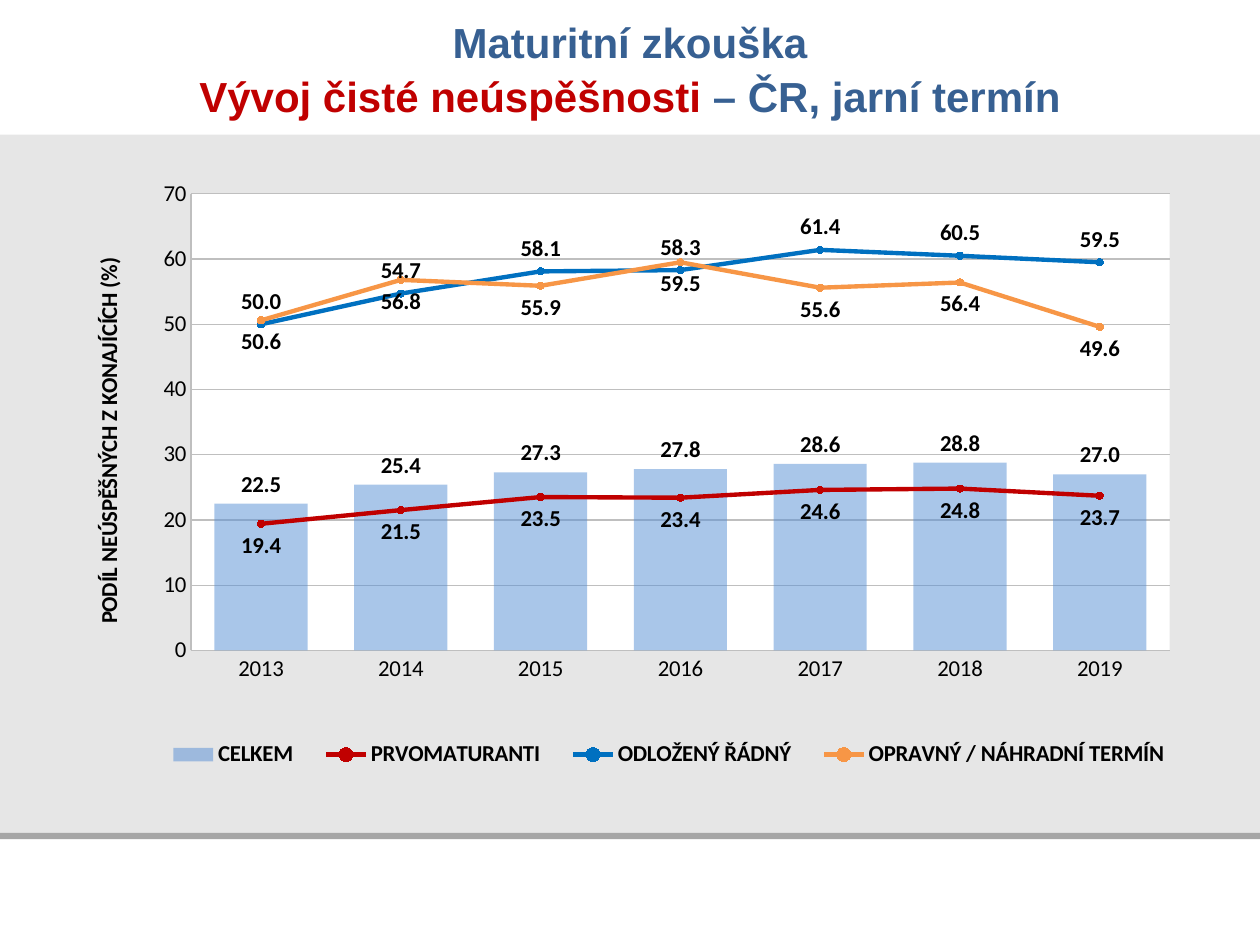
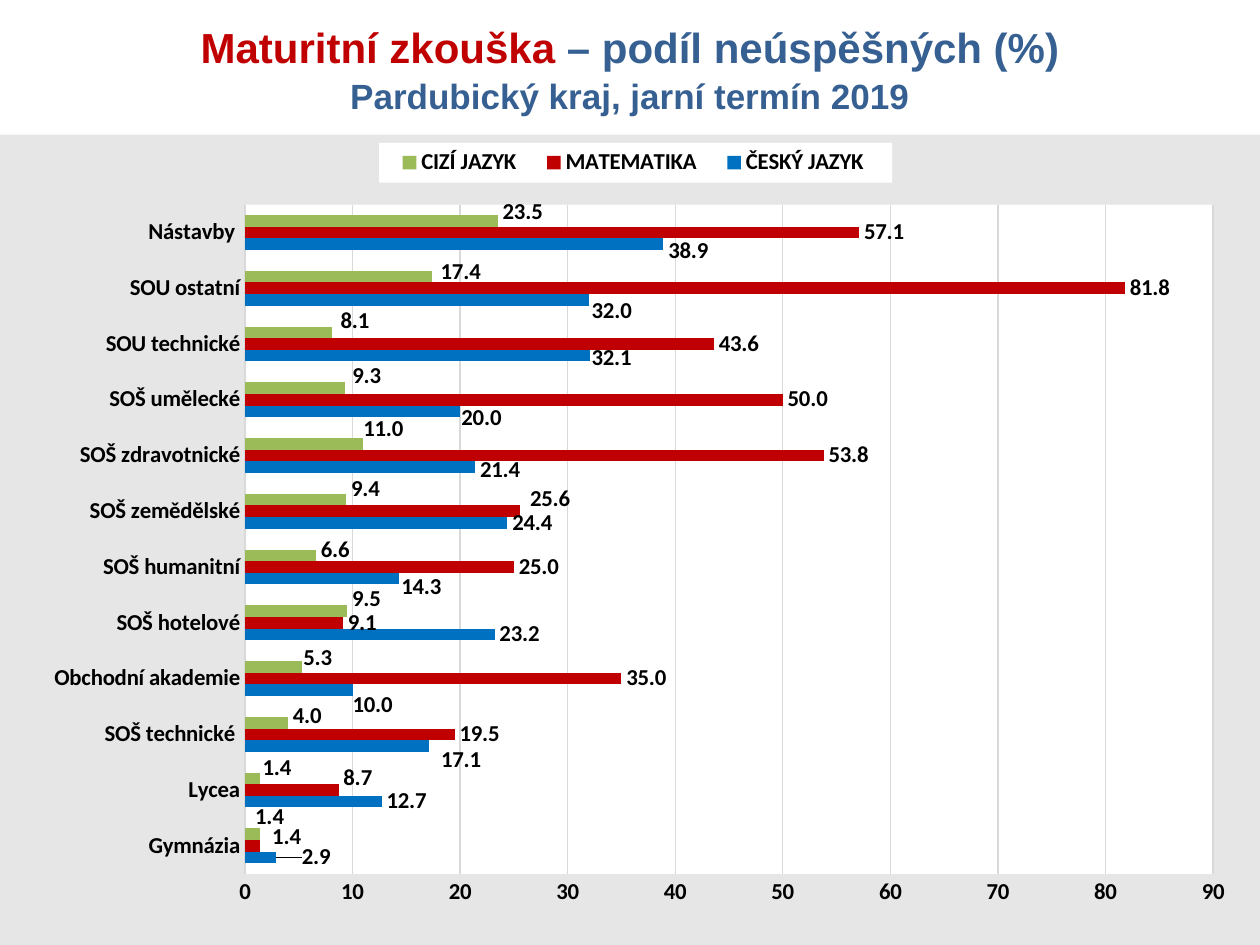
from dataclasses import dataclass

from lxml import etree
from pptx import Presentation
from pptx.chart.data import CategoryChartData
from pptx.dml.color import RGBColor
from pptx.enum.chart import XL_CHART_TYPE, XL_LABEL_POSITION, XL_LEGEND_POSITION, XL_MARKER_STYLE, XL_TICK_MARK
from pptx.enum.shapes import MSO_SHAPE
from pptx.enum.text import MSO_ANCHOR, PP_ALIGN
from pptx.oxml import parse_xml
from pptx.oxml.ns import nsdecls, qn
from pptx.util import Inches, Pt

COLUMNS = XL_CHART_TYPE.COLUMN_CLUSTERED
BARS = XL_CHART_TYPE.BAR_CLUSTERED
ABOVE = XL_LABEL_POSITION.ABOVE
BELOW = XL_LABEL_POSITION.BELOW
BAR_END = XL_LABEL_POSITION.OUTSIDE_END
LEGEND_TOP = XL_LEGEND_POSITION.TOP
LEGEND_RIGHT = XL_LEGEND_POSITION.RIGHT
CIRCLE = XL_MARKER_STYLE.CIRCLE
NO_TICK = XL_TICK_MARK.NONE
RECTANGLE = MSO_SHAPE.RECTANGLE
MIDDLE = MSO_ANCHOR.MIDDLE
CENTER = PP_ALIGN.CENTER

GRID_COLUMNS, GRID_ROWS = 100, 75
BAND_LEFT, BAND_WIDTH, HEADER_ROWS = -1.2, 102.4, 10.7


@dataclass(frozen=True)
class Theme:
    page: str = "E6E6E6"
    white: str = "FFFFFF"
    rule: str = "A6A6A6"
    ink: str = "000000"
    navy: str = "376092"
    red: str = "C00000"
    blue: str = "0070C0"
    pale_blue: str = "558ED5"
    orange: str = "F79646"
    green: str = "9BBB59"
    axis: str = "BFBFBF"
    light_axis: str = "D9D9D9"
    title_font: str = "Arial"
    chart_font: str = "Calibri"
    title_size: int = 24
    subtitle_size: int = 20
    chart_size: int = 13
    title_spacing: float = 1.06


def paint(fill, color):
    fill.solid()
    fill.fore_color.rgb = RGBColor.from_string(color)


def draw(line, color, width):
    paint(line.fill, color)
    line.width = Pt(width)


def solid_area(color):
    return parse_xml(
        f'<c:spPr {nsdecls("c", "a")}><a:solidFill><a:srgbClr val="{color}"/></a:solidFill></c:spPr>')


def place(part, index, inner=False, **shares):
    for old in part.findall(qn("c:layout")):
        part.remove(old)
    fields = ['<c:layoutTarget val="inner"/>'] if inner else []
    fields += [f'<c:{axis}Mode val="edge"/>' for axis in "xy"]
    fields += [f'<c:{axis} val="{share}"/>' for axis, share in shares.items()]
    part.insert(index, parse_xml(
        f'<c:layout {nsdecls("c")}><c:manualLayout>{"".join(fields)}</c:manualLayout></c:layout>'))


class Deck:
    def __init__(self, theme):
        self.theme = theme
        self.prs = Presentation()
        self.prs.slide_width, self.prs.slide_height = Inches(10), Inches(7.5)
        self.slide = None

    def box(self, left, top, width, height):
        column = self.prs.slide_width / GRID_COLUMNS
        row = self.prs.slide_height / GRID_ROWS
        return [round(n) for n in (left * column, top * row, width * column, height * row)]

    def new_slide(self, title_lines):
        self.slide = self.prs.slides.add_slide(self.prs.slide_layouts[6])
        paint(self.slide.background.fill, self.theme.page)
        self.band(0, HEADER_ROWS, self.theme.white)
        self.title(title_lines)

    def band(self, top, rows, color):
        band = self.slide.shapes.add_shape(RECTANGLE, *self.box(BAND_LEFT, top, BAND_WIDTH, rows))
        band.shadow.inherit = False
        paint(band.fill, color)
        band.line.fill.background()

    def title(self, lines):
        frame = self.slide.shapes.add_textbox(*self.box(7.5, 0, 85, HEADER_ROWS)).text_frame
        frame.word_wrap = True
        frame.vertical_anchor = MIDDLE
        heading = frame.paragraphs[0]
        heading.alignment = CENTER
        heading.line_spacing = self.theme.title_spacing
        heading.font.name = self.theme.title_font
        heading.font.bold = True
        for number, (size, pieces) in enumerate(lines):
            if number:
                heading.add_line_break()
            for words, color in pieces:
                run = heading.add_run()
                run.text = words
                run.font.size = Pt(size)
                run.font.color.rgb = RGBColor.from_string(color)

    def chart_type(self, font, bold):
        font.name = self.theme.chart_font
        font.size = Pt(self.theme.chart_size)
        font.bold = bold
        font.color.rgb = RGBColor.from_string(self.theme.ink)

    def chart(self, kind, area, categories, series, gap, top_value, grid_color, plot_area, bold=False):
        data = CategoryChartData(number_format="0.0")
        data.categories = categories
        for name, values in series:
            data.add_series(name, values)
        chart = self.slide.shapes.add_chart(kind, *self.box(*area), data).chart
        chart.has_title = False
        self.chart_type(chart.font, bold)
        plot = chart.plots[0]
        plot.vary_by_categories = False
        plot.gap_width, plot.overlap = gap, 0
        scale = chart.value_axis
        scale.minimum_scale, scale.maximum_scale, scale.major_unit = 0, top_value, 10
        scale.has_major_gridlines = True
        draw(scale.major_gridlines.format.line, grid_color, 0.75)
        scale.tick_labels.number_format = "0"
        scale.tick_labels.number_format_is_linked = False
        draw(chart.category_axis.format.line, grid_color, 0.75)
        for axis in (scale, chart.category_axis):
            axis.major_tick_mark = axis.minor_tick_mark = NO_TICK
            self.chart_type(axis.tick_labels.font, bold)
        canvas = chart.element.find(".//" + qn("c:plotArea"))
        place(canvas, 0, inner=True, **plot_area)
        canvas.append(solid_area(self.theme.white))
        return chart

    def legend(self, chart, position, area, color=None):
        chart.has_legend = True
        chart.legend.position = position
        chart.legend.include_in_layout = False
        self.chart_type(chart.legend.font, True)
        legend = chart.element.find(".//" + qn("c:legend"))
        place(legend, 1, **area)
        if color:
            legend.find(qn("c:overlay")).addnext(solid_area(color))

    def axis_title(self, chart, words, area):
        frame = chart.value_axis.axis_title.text_frame
        frame.text = words
        self.chart_type(frame.paragraphs[0].font, True)
        title = chart.element.find(".//" + qn("c:valAx")).find(qn("c:title"))
        turn = title.find(".//" + qn("a:bodyPr"))
        turn.set("rot", "-5400000")
        turn.set("vert", "horz")
        place(title, 1, **area)

    def labels(self, series, position, shifts=None):
        labels = series.data_labels
        labels.show_value = True
        labels.number_format = "0.0"
        labels.number_format_is_linked = False
        labels.position = position
        self.chart_type(labels.font, True)
        group = series._element.find(qn("c:dLbls"))
        style = etree.tostring(group.find(qn("c:txPr")), encoding="unicode")
        hidden = "".join(f'<c:show{part} val="0"/>' for part in ("CatName", "SerName", "Percent", "BubbleSize"))
        for order, (point, (right, down)) in enumerate((shifts or {}).items()):
            group.insert(order, parse_xml(
                f'<c:dLbl {nsdecls("c", "a")}><c:idx val="{point}"/><c:layout><c:manualLayout>'
                f'<c:x val="{right / 100}"/><c:y val="{down / 100}"/></c:manualLayout></c:layout>'
                f'<c:numFmt formatCode="0.0" sourceLinked="0"/>{style}<c:dLblPos val="outEnd"/>'
                f'<c:showLegendKey val="0"/><c:showVal val="1"/>{hidden}</c:dLbl>'))

    def lines_over_columns(self, chart):
        columns = chart.element.find(".//" + qn("c:barChart"))
        lines = parse_xml(
            f'<c:lineChart {nsdecls("c")}><c:grouping val="standard"/><c:varyColors val="0"/></c:lineChart>')
        for series in columns.findall(qn("c:ser"))[1:]:
            for bar_only in series.findall(qn("c:invertIfNegative")):
                series.remove(bar_only)
            lines.append(series)
        lines.append(parse_xml(f'<c:marker {nsdecls("c")} val="1"/>'))
        for axis in columns.findall(qn("c:axId")):
            lines.append(parse_xml(f'<c:axId {nsdecls("c")} val="{axis.get("val")}"/>'))
        columns.addnext(lines)
        return chart.plots[1].series

    def trend(self, series, color, label_position):
        series.smooth = False
        draw(series.format.line, color, 2.5)
        series.marker.style = CIRCLE
        series.marker.size = 4
        paint(series.marker.format.fill, color)
        draw(series.marker.format.line, color, 0.75)
        self.labels(series, label_position)


def failure_trend(deck):
    theme = deck.theme
    deck.new_slide([
        (theme.title_size, [("Maturitní zkouška", theme.navy)]),
        (theme.title_size, [("Vývoj čisté neúspěšnosti ", theme.red), ("– ČR, jarní termín", theme.navy)])])
    deck.band(66.6, 8.7, theme.white)
    deck.band(66.1, 0.5, theme.rule)
    rates = [
        ("CELKEM", (22.5, 25.4, 27.3, 27.8, 28.6, 28.8, 27)),
        ("PRVOMATURANTI", (19.4, 21.5, 23.5, 23.4, 24.6, 24.8, 23.7)),
        ("ODLOŽENÝ ŘÁDNÝ", (50, 54.7, 58.1, 58.3, 61.4, 60.5, 59.5)),
        ("OPRAVNÝ / NÁHRADNÍ TERMÍN", (50.6, 56.8, 55.9, 59.5, 55.6, 56.4, 49.6))]
    years = [str(year) for year in range(2013, 2020)]
    chart = deck.chart(COLUMNS, (4.3, 12.3, 92.9, 52.3), years, rates, 50, 70, theme.axis,
                       dict(x=0.117, y=0.059, w=0.836, h=0.693))
    draw(chart.value_axis.format.line, theme.axis, 0.75)
    deck.axis_title(chart, "PODÍL NEÚSPĚŠNÝCH Z KONAJÍCÍCH (%)", dict(x=0.03, y=0.15))
    deck.legend(chart, LEGEND_RIGHT, dict(x=0.08, y=0.87, w=0.89, h=0.08))
    trends = deck.lines_over_columns(chart)
    total = chart.plots[0].series[0]
    paint(total.format.fill, theme.pale_blue)
    tint = total._element.find(".//" + qn("a:srgbClr"))
    etree.SubElement(tint, qn("a:alpha")).set("val", "50000")
    deck.labels(total, BAR_END)
    styles = [(theme.red, BELOW), (theme.blue, ABOVE), (theme.orange, BELOW)]
    for series, (color, position) in zip(trends, styles):
        deck.trend(series, color, position)


def failure_by_school(deck):
    theme = deck.theme
    deck.new_slide([
        (theme.title_size, [("Maturitní zkouška ", theme.red), ("– podíl neúspěšných (%)", theme.navy)]),
        (theme.subtitle_size, [("Pardubický kraj, jarní termín 2019", theme.navy)])])
    schools = ["Gymnázia", "Lycea", "SOŠ technické ", "Obchodní akademie", "SOŠ hotelové", "SOŠ humanitní",
               "SOŠ zemědělské", "SOŠ zdravotnické", "SOŠ umělecké", "SOU technické", "SOU ostatní", "Nástavby "]
    subjects = [
        ("ČESKÝ JAZYK ", (2.9, 12.7, 17.1, 10, 23.2, 14.3, 24.4, 21.4, 20, 32.1, 32, 38.9)),
        ("MATEMATIKA", (1.4, 8.7, 19.5, 35, 9.1, 25, 25.6, 53.8, 50, 43.6, 81.8, 57.1)),
        ("CIZÍ JAZYK", (1.4, 1.4, 4, 5.3, 9.5, 6.6, 9.4, 11, 9.3, 8.1, 17.4, 23.5))]
    czech_shifts = {0: (1.7, 0), 2: (0.6, 1.8), 3: (-0.4, 1.9), 5: (-0.2, 1.1), 7: (0, 0.4),
                    8: (-0.3, 0.9), 9: (-0.3, 0.4), 10: (-0.2, 1.4), 11: (0, 0.9)}
    maths_shifts = {0: (0.6, -1.1), 1: (0, -1.5), 6: (0.4, -1.5)}
    foreign_shifts = dict(enumerate([
        (-0.8, -2.1), (-0.2, -1.3), (0, -0.8), (-0.3, -1.1), (0, -1.5), (0, -0.6),
        (0, -1.3), (-0.4, -1.8), (0.2, -1.5), (0.3, -1.4), (0.3, -0.6), (0, -1.1)]))
    chart = deck.chart(BARS, (2, 10.7, 96.9, 63), schools, subjects, 182, 90, theme.light_axis,
                       dict(x=0.18, y=0.088, w=0.793, h=0.843), bold=True)
    chart.value_axis.format.line.fill.background()
    deck.legend(chart, LEGEND_TOP, dict(x=0.29, y=0.01, w=0.42, h=0.05), theme.white)
    styles = [(theme.blue, czech_shifts), (theme.red, maths_shifts), (theme.green, foreign_shifts)]
    for series, (color, shifts) in zip(chart.plots[0].series, styles):
        paint(series.format.fill, color)
        deck.labels(series, BAR_END, shifts)


def main():
    deck = Deck(Theme())
    failure_trend(deck)
    failure_by_school(deck)
    deck.prs.save("out.pptx")


if __name__ == "__main__":
    main()
